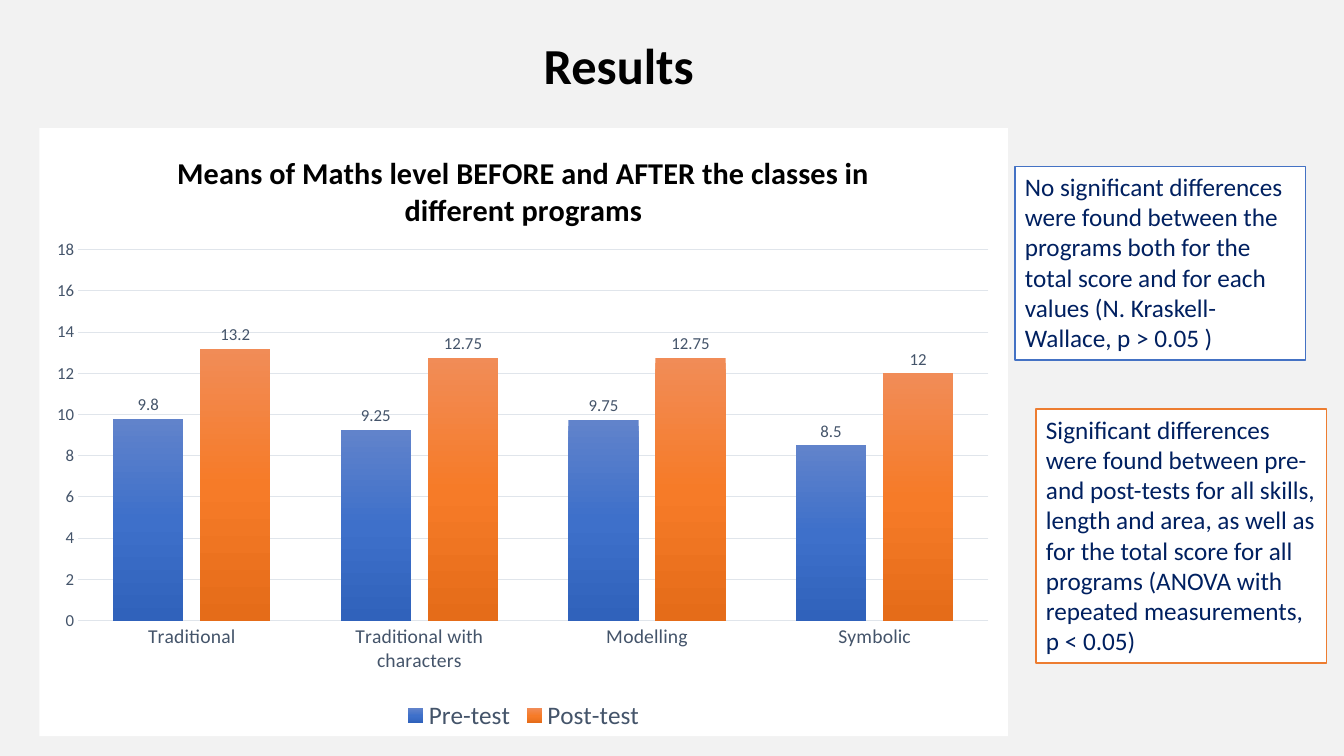
from pptx import Presentation
from pptx.chart.data import CategoryChartData
from pptx.dml.color import RGBColor
from pptx.enum.chart import XL_CHART_TYPE, XL_LABEL_POSITION, XL_LEGEND_POSITION, XL_TICK_MARK
from pptx.enum.shapes import MSO_SHAPE
from pptx.enum.text import MSO_ANCHOR, PP_ALIGN
from pptx.oxml import parse_xml
from pptx.oxml.ns import nsdecls
from pptx.util import Cm, Pt

COLUMNS = XL_CHART_TYPE.COLUMN_CLUSTERED
OUTSIDE = XL_LABEL_POSITION.OUTSIDE_END
BOTTOM = XL_LEGEND_POSITION.BOTTOM
NO_TICK = XL_TICK_MARK.NONE
RECT = MSO_SHAPE.RECTANGLE
MIDDLE, TOP = MSO_ANCHOR.MIDDLE, MSO_ANCHOR.TOP
CENTER, LEFT = PP_ALIGN.CENTER, PP_ALIGN.LEFT

FONT = "Calibri"
GREY = RGBColor(0xF2, 0xF2, 0xF2)
WHITE = RGBColor(0xFF, 0xFF, 0xFF)
BLACK = RGBColor(0, 0, 0)
NAVY = RGBColor(0x00, 0x20, 0x60)
SLATE = RGBColor(0x44, 0x54, 0x6A)
PALE = RGBColor(0xE0, 0xE5, 0xEB)
BLUE = RGBColor(0x44, 0x72, 0xC4)
ORANGE = RGBColor(0xED, 0x7D, 0x31)
BLUES = (RGBColor(0x61, 0x83, 0xCB), RGBColor(0x3E, 0x70, 0xCA), RGBColor(0x30, 0x62, 0xBB))
ORANGES = (RGBColor(0xF1, 0x8C, 0x57), RGBColor(0xF6, 0x7B, 0x28), RGBColor(0xE5, 0x6C, 0x19))

PROGRAMS = ("Traditional", "Traditional with characters", "Modelling", "Symbolic")
TESTS = (
    ("Pre-test", (9.8, 9.25, 9.75, 8.5), BLUES),
    ("Post-test", (13.2, 12.75, 12.75, 12), ORANGES),
)
NOTES = (
    ("No significant differences were found between the programs both for the "
     "total score and for each values (N. Kraskell-Wallace, p > 0.05 )",
     25.58, 4.19, 4.88, BLUE),
    ("Significant differences were found between pre- and post-tests for all "
     "skills, length and area, as well as for the total score for all programs "
     "(ANOVA with repeated measurements, p < 0.05)",
     26.11, 10.31, 6.4, ORANGE),
)


def style(font, size, color, bold=False):
    font.name = FONT
    font.size = Pt(size)
    font.bold = bold
    font.color.rgb = color


def add_title(slide, text):
    box = slide.shapes.add_textbox(Cm(0.99), Cm(0.51), Cm(29.21), Cm(2.41))
    frame = box.text_frame
    frame.word_wrap = True
    frame.vertical_anchor = MIDDLE
    frame.text = text
    para = frame.paragraphs[0]
    para.alignment = CENTER
    para.line_spacing = 0.9
    style(para.runs[0].font, 36, BLACK, True)


def add_note(slide, text, left, top, height, color):
    box = slide.shapes.add_shape(RECT, Cm(left), Cm(top), Cm(7.32), Cm(height))
    box.shadow.inherit = False
    box.fill.solid()
    box.fill.fore_color.rgb = WHITE
    box.line.color.rgb = color
    box.line.width = Pt(1)
    frame = box.text_frame
    frame.word_wrap = True
    frame.vertical_anchor = TOP
    frame.text = text
    para = frame.paragraphs[0]
    para.alignment = LEFT
    style(para.runs[0].font, 18, NAVY)


def shade(series, colors):
    """Fill the bars with a vertical gradient of three even stops."""
    stops = "".join(
        f'<a:gs pos="{i * 50000}"><a:srgbClr val="{color}"/></a:gs>'
        for i, color in enumerate(colors))
    fill = parse_xml(
        f'<a:gradFill {nsdecls("a")} rotWithShape="1"><a:gsLst>{stops}</a:gsLst>'
        '<a:lin ang="5400000" scaled="0"/></a:gradFill>')
    series._element.get_or_add_spPr().insert(0, fill)


def frame_chart(chart):
    """Give the chart a white ground and fix the place of its plot area."""
    root = chart.element.find("{*}chart")
    root.addnext(parse_xml(
        f'<c:spPr {nsdecls("c", "a")}><a:solidFill><a:srgbClr val="{WHITE}"/>'
        '</a:solidFill><a:ln><a:noFill/></a:ln></c:spPr>'))
    plot = root.find("{*}plotArea")
    for old in plot.findall("{*}layout"):
        plot.remove(old)
    sides = "".join(
        f'<c:{side} val="{share}"/>'
        for side, share in (("x", 0.04), ("y", 0.2), ("w", 0.94), ("h", 0.61)))
    plot.insert(0, parse_xml(
        f'<c:layout {nsdecls("c")}><c:manualLayout><c:layoutTarget val="inner"/>'
        f'<c:xMode val="edge"/><c:yMode val="edge"/>{sides}'
        '</c:manualLayout></c:layout>'))


def style_axes(chart):
    for axis, size in ((chart.category_axis, 14), (chart.value_axis, 12)):
        axis.major_tick_mark = axis.minor_tick_mark = NO_TICK
        style(axis.tick_labels.font, size, SLATE)
    values = chart.value_axis
    values.minimum_scale, values.maximum_scale, values.major_unit = 0, 18, 2
    values.format.line.fill.background()
    for line in (chart.category_axis.format.line, values.major_gridlines.format.line):
        line.color.rgb = PALE
        line.width = Pt(0.75)


def add_bars(slide):
    data = CategoryChartData()
    data.categories = PROGRAMS
    for name, means, _ in TESTS:
        data.add_series(name, means)
    chart = slide.shapes.add_chart(
        COLUMNS, Cm(0.99), Cm(3.23), Cm(24.41), Cm(15.32), data).chart
    style(chart.font, 10, BLACK)
    frame = chart.chart_title.text_frame
    frame.text = "Means of Maths level BEFORE and AFTER the classes in different programs"
    style(frame.paragraphs[0].runs[0].font, 21.6, BLACK, True)
    chart.chart_title.include_in_layout = False
    chart.has_legend = True
    chart.legend.position = BOTTOM
    chart.legend.include_in_layout = False
    style(chart.legend.font, 18, SLATE)
    style_axes(chart)
    plot = chart.plots[0]
    plot.gap_width, plot.overlap = 100, -24
    plot.vary_by_categories = False
    for series, (_, _, colors) in zip(plot.series, TESTS):
        shade(series, colors)
        labels = series.data_labels
        labels.show_value = True
        labels.position = OUTSIDE
        style(labels.font, 12, SLATE)
    frame_chart(chart)


def main():
    deck = Presentation()
    deck.slide_width, deck.slide_height = Cm(33.87), Cm(19.05)
    slide = deck.slides.add_slide(deck.slide_layouts[6])
    slide.background.fill.solid()
    slide.background.fill.fore_color.rgb = GREY
    add_title(slide, "Results")
    add_bars(slide)
    for note in NOTES:
        add_note(slide, *note)
    deck.save("out.pptx")


if __name__ == "__main__":
    main()
